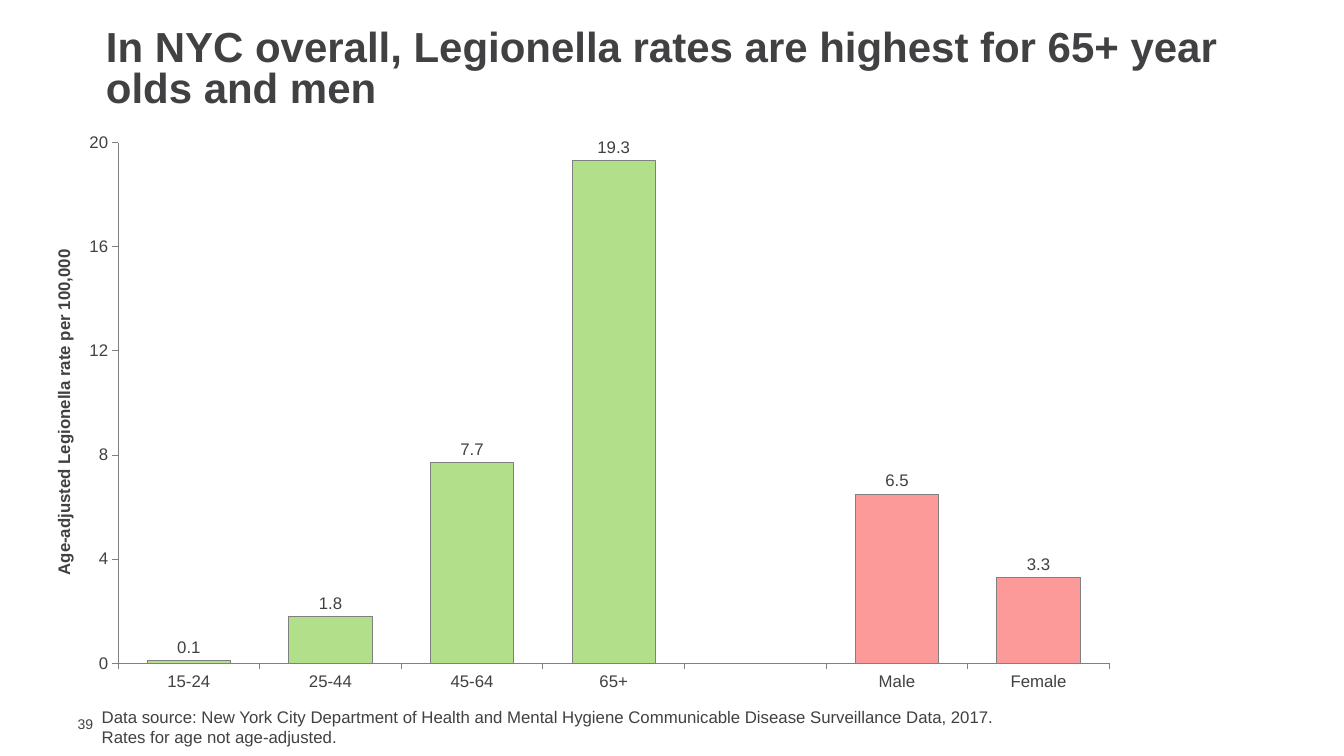
"""Build a slide on Legionella rates by age and sex."""
from dataclasses import dataclass

from lxml import etree
from pptx import Presentation
from pptx import util as u
from pptx.chart import data as cd
from pptx.dml import color
from pptx.enum import chart as ce, text as te
from pptx.oxml import ns


@dataclass(frozen=True)
class Theme:
    """Colours, font and type sizes."""
    ink: str = "414042"
    rule: str = "808080"
    age: str = "B2DF8A"
    sex: str = "FB9A99"
    face: str = "Arial"
    head: int = 30
    body: int = 12
    small: int = 10


THEME = Theme()
WIDE, HIGH = u.Inches(13.33), u.Inches(7.5)
RATES = {"15-24": 0.1, "25-44": 1.8, "45-64": 7.7, "65+": 19.3,
         "": None, "Male": 6.5, "Female": 3.3}
SEXES = ("Male", "Female")
PLOT = {"x": 0.063, "y": 0.029, "w": 0.922, "h": 0.903}


def area(left, top, width, height):
    """Turn percentages of the slide into lengths."""
    return [int(share * side / 100) for share, side in
            zip((left, top, width, height), (WIDE, HIGH) * 2)]


def style(font, size, bold=False):
    """Apply the theme's type to a font."""
    font.name, font.size, font.bold = THEME.face, u.Pt(size), bold
    font.color.rgb = color.RGBColor.from_string(THEME.ink)


def paint(form, tint):
    """Fill a bar and give it a thin outline."""
    form.fill.solid()
    form.fill.fore_color.rgb = color.RGBColor.from_string(tint)
    trace(form.line)


def trace(line):
    """Draw a line in the rule colour."""
    line.color.rgb = color.RGBColor.from_string(THEME.rule)
    line.width = u.Pt(0.75)


def put_title(slide, words, place):
    """Place and format the title."""
    box = slide.shapes.title
    box.left, box.top, box.width, box.height = place
    frame = box.text_frame
    frame.text = words
    frame.auto_size = te.MSO_AUTO_SIZE.NONE
    frame.vertical_anchor = te.MSO_ANCHOR.MIDDLE
    para = frame.paragraphs[0]
    para.alignment, para.line_spacing = te.PP_ALIGN.LEFT, 0.8
    style(para.runs[0].font, THEME.head, True)


def put_text(slide, words, place, size):
    """Add a wrapped text box and return its frame."""
    frame = slide.shapes.add_textbox(*place).text_frame
    frame.word_wrap = True
    frame.text = words
    for para in frame.paragraphs:
        style(para.runs[0].font, size)
    return frame


def set_axis(axis):
    """Format an axis without grid lines."""
    axis.has_major_gridlines = False
    axis.major_tick_mark = ce.XL_TICK_MARK.OUTSIDE
    axis.minor_tick_mark = ce.XL_TICK_MARK.NONE
    style(axis.tick_labels.font, THEME.body)
    trace(axis.format.line)


def set_plot(chart):
    """Fix the inner plot area as shares of the chart."""
    zone = chart._chartSpace.chart.plotArea
    for old in zone.findall(ns.qn("c:layout")):
        zone.remove(old)
    layout = etree.Element(ns.qn("c:layout"))
    zone.insert(0, layout)
    manual = etree.SubElement(layout, ns.qn("c:manualLayout"))
    marks = {"layoutTarget": "inner", "xMode": "edge", "yMode": "edge", **PLOT}
    for tag, value in marks.items():
        etree.SubElement(manual, ns.qn(f"c:{tag}")).set("val", str(value))


def put_chart(slide, place):
    """Add the column chart of rates."""
    table = cd.CategoryChartData(number_format="0.0")
    table.categories = list(RATES)
    table.add_series("Series 1", list(RATES.values()))
    chart = slide.shapes.add_chart(
        ce.XL_CHART_TYPE.COLUMN_CLUSTERED, *place, table).chart
    style(chart.font, THEME.small)
    chart.has_legend = chart.has_title = False
    set_plot(chart)

    scale = chart.value_axis
    set_axis(chart.category_axis)
    set_axis(scale)
    scale.minimum_scale, scale.maximum_scale, scale.major_unit = 0, 20, 4
    scale.tick_labels.number_format = "0"
    scale.tick_labels.number_format_is_linked = False
    frame = scale.axis_title.text_frame
    frame.text = "Age-adjusted Legionella rate per 100,000"
    style(frame.paragraphs[0].runs[0].font, THEME.body, True)

    plot = chart.plots[0]
    plot.gap_width, plot.vary_by_categories = 70, False
    bars = plot.series[0]
    bars.invert_if_negative = False
    paint(bars.format, THEME.age)
    for spot, name in enumerate(RATES):
        if name in SEXES:
            paint(bars.points[spot].format, THEME.sex)
    labels = bars.data_labels
    labels.show_value = True
    labels.position = ce.XL_LABEL_POSITION.OUTSIDE_END
    style(labels.font, THEME.body)


def main():
    """Build and save the slide."""
    deck = Presentation()
    deck.slide_width, deck.slide_height = WIDE, HIGH
    slide = deck.slides.add_slide(deck.slide_layouts[5])
    put_title(slide, "In NYC overall, Legionella rates are highest for "
              "65+ year olds and men", area(7.13, 3.33, 90, 12.13))
    put_chart(slide, area(3.75, 16.67, 80, 76.27))
    put_text(slide, "Data source: New York City Department of Health and "
             "Mental Hygiene Communicable Disease Surveillance Data, 2017.\n"
             "Rates for age not age-adjusted.",
             area(6.83, 92.8, 74.4, 6.67), THEME.body)
    page = put_text(slide, "39", area(5.03, 94.67, 3.2, 2.27), THEME.small)
    page.margin_top = page.margin_bottom = page.margin_right = 0
    page.vertical_anchor = te.MSO_ANCHOR.MIDDLE
    deck.save("out.pptx")


if __name__ == "__main__":
    main()
